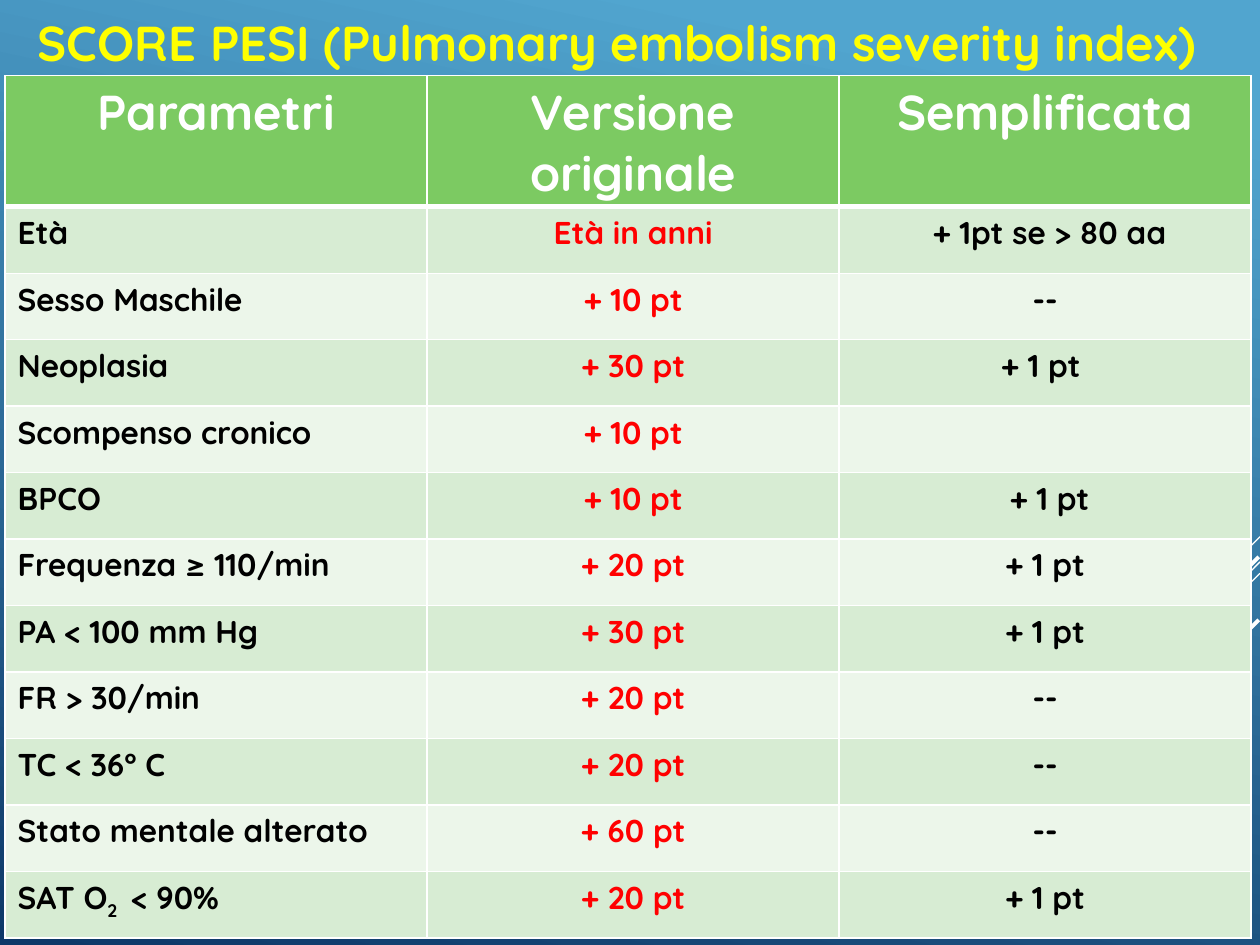
from dataclasses import dataclass

from lxml.etree import SubElement
from pptx import Presentation
from pptx.dml.color import RGBColor
from pptx.enum.shapes import MSO_CONNECTOR
from pptx.enum.text import MSO_ANCHOR, MSO_AUTO_SIZE, PP_ALIGN
from pptx.oxml.ns import qn
from pptx.util import Pt

FONT = "Quicksand"
WHITE, BLACK, RED, YELLOW = "FFFFFF", "000000", "FF0000", "FFFF00"
HEADER_GREEN = "7CCA62"
BANDS = ("D7ECD3", "ECF6EA")
SUBSCRIPT = -25000


@dataclass
class Stroke:
    """A diagonal line, from its right end to its left end."""
    x1: float
    y1: float
    x2: float
    y2: float
    width: float


@dataclass
class Score:
    parameter: str
    original: str
    simplified: str


STROKES = [
    Stroke(720, 306.7, 660.2, 366.5, 0.75),
    Stroke(720, 321.1, 525.6, 516.2, 0.75),
    Stroke(720, 327.6, 596.2, 451.4, 0.75),
    Stroke(719.3, 318.2, 606.2, 431.3, 2.25),
    Stroke(719.3, 354.2, 637.2, 436.3, 2.25),
]
HEADINGS = ("Parametri", "Versione originale", "Semplificata")
SCORES = [
    Score("Età", "Età in anni", " + 1pt se > 80 aa"),
    Score("Sesso Maschile", "+ 10 pt", "--"),
    Score("Neoplasia", "+ 30 pt", "+ 1 pt "),
    Score("Scompenso cronico", "+ 10 pt", ""),
    Score("BPCO", "+ 10 pt", " + 1 pt"),
    Score("Frequenza ≥ 110/min", "+ 20 pt", "+ 1 pt"),
    Score("PA < 100 mm Hg", "+ 30 pt", "+ 1 pt"),
    Score("FR > 30/min", "+ 20 pt", "--"),
    Score("TC < 36° C", "+ 20 pt", "--"),
    Score("Stato mentale alterato", "+ 60 pt", "--"),
    Score("SAT O|2 | < 90%", "+ 20 pt", "+ 1 pt"),  # bars enclose the subscript
]
COLUMN_WIDTHS = (241.2, 235.4, 235.4)
HEADER_HEIGHT, ROW_HEIGHT = 75, 38


def colour(value: str) -> RGBColor:
    return RGBColor.from_string(value)


def add_text(para, text: str, size: float, ink: str, align=PP_ALIGN.LEFT) -> None:
    para.alignment = align
    for index, part in enumerate(text.split("|") if text else []):
        span = para.add_run()
        span.text = part
        span.font.name = FONT
        span.font.size = Pt(size)
        span.font.bold = True
        span.font.color.rgb = colour(ink)
        if index % 2:
            span.font._element.set("baseline", str(SUBSCRIPT))


def add_stroke(page, stroke: Stroke) -> None:
    line = page.shapes.add_connector(
        MSO_CONNECTOR.STRAIGHT,
        Pt(stroke.x1), Pt(stroke.y1), Pt(stroke.x2), Pt(stroke.y2))
    line.line.color.rgb = colour(WHITE)
    line.line.width = Pt(stroke.width)
    SubElement(line._element.spPr, qn("a:effectLst"))


def style_cell(cell, fill: str, top: float = 1, bottom: float = 1) -> None:
    properties = cell._tc.get_or_add_tcPr()
    for side, width in (("L", 1), ("R", 1), ("T", top), ("B", bottom)):
        border = SubElement(properties, qn(f"a:ln{side}"), w=str(Pt(width)))
        paint = SubElement(border, qn("a:solidFill"))
        SubElement(paint, qn("a:srgbClr"), val=WHITE)
    cell.fill.solid()
    cell.fill.fore_color.rgb = colour(fill)


def add_score_table(page) -> None:
    height = HEADER_HEIGHT + ROW_HEIGHT * len(SCORES)
    table = page.shapes.add_table(
        len(SCORES) + 1, len(HEADINGS), Pt(2.9), Pt(43.2),
        Pt(sum(COLUMN_WIDTHS)), Pt(height)).table
    for column, width in zip(table.columns, COLUMN_WIDTHS):
        column.width = Pt(width)
    for index, row in enumerate(table.rows):
        row.height = Pt(ROW_HEIGHT if index else HEADER_HEIGHT)

    # Header row, with a heavy rule below it
    for cell, heading in zip(table.rows[0].cells, HEADINGS):
        style_cell(cell, HEADER_GREEN, bottom=3)
        add_text(cell.text_frame.paragraphs[0], heading, 28, WHITE, PP_ALIGN.CENTER)

    # Banded score rows
    for index, score in enumerate(SCORES):
        entries = (
            (score.parameter, BLACK, PP_ALIGN.LEFT),
            (score.original, RED, PP_ALIGN.CENTER),
            (score.simplified, BLACK, PP_ALIGN.CENTER),
        )
        for cell, (text, ink, align) in zip(table.rows[index + 1].cells, entries):
            style_cell(cell, BANDS[index % 2], top=1 if index else 3)
            add_text(cell.text_frame.paragraphs[0], text, 18, ink, align)


def add_title(page) -> None:
    title = page.shapes.title
    title.left, title.top, title.width, title.height = Pt(14.4), Pt(3.6), Pt(689), Pt(41)
    frame = title.text_frame
    frame.word_wrap = False
    frame.auto_size = MSO_AUTO_SIZE.SHAPE_TO_FIT_TEXT
    frame.vertical_anchor = MSO_ANCHOR.TOP
    add_text(frame.paragraphs[0], "SCORE PESI (Pulmonary embolism severity index)",
             28, YELLOW)


def main() -> None:
    deck = Presentation()
    deck.slide_width, deck.slide_height = Pt(720), Pt(540)
    page = deck.slides.add_slide(deck.slide_layouts[5])

    # Background gradient; the angle counts anticlockwise
    fill = page.background.fill
    fill.gradient()
    fill.gradient_angle = 258
    for stop, (place, shade) in zip(fill.gradient_stops, ((0.1, "51A5CF"), (1, "0D3868"))):
        stop.position = place
        stop.color.rgb = colour(shade)

    for stroke in STROKES:
        add_stroke(page, stroke)
    add_score_table(page)
    add_title(page)
    deck.save("out.pptx")


if __name__ == "__main__":
    main()
